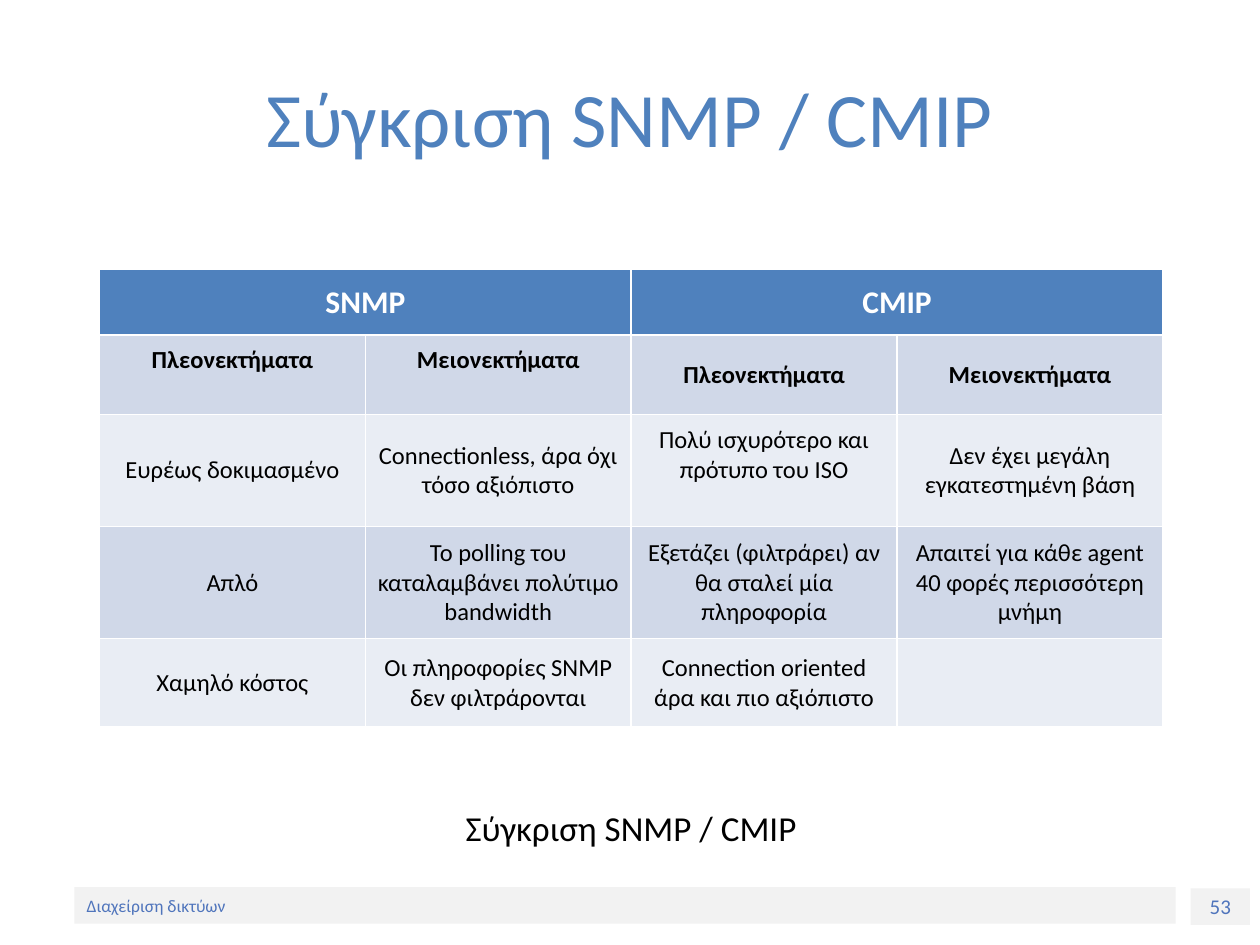
from dataclasses import dataclass

from lxml.etree import SubElement
from pptx import Presentation
from pptx.dml.color import RGBColor
from pptx.enum.shapes import MSO_SHAPE
from pptx.enum.text import MSO_ANCHOR, PP_ALIGN
from pptx.oxml.ns import qn
from pptx.util import Inches, Pt


@dataclass(frozen=True)
class Theme:
    font: str = "Calibri"
    accent: str = "4F81BD"
    footer_ink: str = "5075BC"
    footer_fill: str = "F2F2F2"
    band_dark: str = "D0D8E8"
    band_light: str = "E9EDF4"
    white: str = "FFFFFF"
    black: str = "000000"
    title_size: int = 44
    caption_size: int = 20
    header_size: int = 18
    cell_size: int = 14
    number_size: int = 12
    footer_size: int = 10


theme = Theme()


def write(frame, text, *, size, color, bold=False, align=PP_ALIGN.CENTER,
          anchor=MSO_ANCHOR.MIDDLE, bullet=True):
    frame.word_wrap = True
    frame.vertical_anchor = anchor
    paragraph = frame.paragraphs[0]
    paragraph.text = text
    paragraph.alignment = align
    paragraph.space_before = Pt(0)
    if not bullet:
        properties = paragraph._p.get_or_add_pPr()
        properties.set("marL", "0")
        properties.set("indent", "0")
        SubElement(properties, qn("a:buNone"))
    font = paragraph.runs[0].font
    font.name = theme.font
    font.size = Pt(size)
    font.bold = bold
    font.color.rgb = RGBColor.from_string(color)


presentation = Presentation()
presentation.slide_width = Inches(10)
presentation.slide_height = Inches(7.5)
slide = presentation.slides.add_slide(presentation.slide_layouts[1])

footer_parts = [
    ("53", 9.45, 7.05, 0.47, theme.number_size, PP_ALIGN.CENTER),
    ("Διαχείριση δικτύων", 0.59, 7.04, 8.74, theme.footer_size, PP_ALIGN.LEFT),
]
for text, left, top, width, size, align in footer_parts:
    strip = slide.shapes.add_shape(
        MSO_SHAPE.RECTANGLE, Inches(left), Inches(top), Inches(width), Inches(0.29))
    strip.shadow.inherit = False
    strip.fill.solid()
    strip.fill.fore_color.rgb = RGBColor.from_string(theme.footer_fill)
    strip.line.fill.background()
    write(strip.text_frame, text, size=size, color=theme.footer_ink, align=align)

title = slide.shapes.title
title.left, title.top = Inches(0.5), Inches(0.3)
title.width, title.height = Inches(9), Inches(1.25)
write(title.text_frame, "Σύγκριση SNMP / CMIP", size=theme.title_size, color=theme.accent)

rows = [
    ["SNMP", "", "CMIP", ""],
    ["Πλεονεκτήματα", "Μειονεκτήματα"] * 2,
    ["Ευρέως δοκιμασμένο", "Connectionless, άρα όχι τόσο αξιόπιστο",
     "Πολύ ισχυρότερο και πρότυπο του ISO", "Δεν έχει μεγάλη εγκατεστημένη βάση"],
    ["Απλό", "Το polling του καταλαμβάνει πολύτιμο bandwidth",
     "Εξετάζει (φιλτράρει) αν θα σταλεί μία πληροφορία",
     "Απαιτεί για κάθε agent 40 φορές περισσότερη μνήμη"],
    ["Χαμηλό κόστος", "Οι πληροφορίες SNMP δεν φιλτράρονται",
     "Connection oriented άρα και πιο αξιόπιστο", ""],
]
row_heights = [0.52, 0.63, 0.89, 0.89, 0.7]
column_width = 2.11
raised_cells = {(1, 0), (1, 1), (2, 2)}

comparison = slide.shapes.add_table(
    len(rows), 4, Inches(0.79), Inches(2.14),
    Inches(4 * column_width), Inches(sum(row_heights))).table
for column in comparison.columns:
    column.width = Inches(column_width)
for start in (0, 2):
    comparison.cell(0, start).merge(comparison.cell(0, start + 1))

for r, (texts, height) in enumerate(zip(rows, row_heights)):
    comparison.rows[r].height = Inches(height)
    is_header = r == 0
    band = theme.band_dark if r % 2 else theme.band_light
    for c, text in enumerate(texts):
        cell = comparison.cell(r, c)
        cell.fill.solid()
        cell.fill.fore_color.rgb = RGBColor.from_string(theme.accent if is_header else band)
        cell.margin_left = cell.margin_right = Inches(0.07)
        cell.margin_top = Inches(0.05)
        cell.margin_bottom = Inches(0.29 if (r, c) in raised_cells else 0.05)
        cell.vertical_anchor = MSO_ANCHOR.MIDDLE
        if text:
            write(cell.text_frame, text, bold=r < 2, anchor=None,
                  size=theme.header_size if is_header else theme.cell_size,
                  color=theme.white if is_header else theme.black)
            cell.vertical_anchor = MSO_ANCHOR.MIDDLE

caption = slide.placeholders[1]
caption.left, caption.top = Inches(2.01), Inches(6.35)
caption.width, caption.height = Inches(6), Inches(0.56)
write(caption.text_frame, "Σύγκριση SNMP / CMIP", size=theme.caption_size,
      color=theme.black, anchor=MSO_ANCHOR.TOP, bullet=False)

presentation.save("out.pptx")
